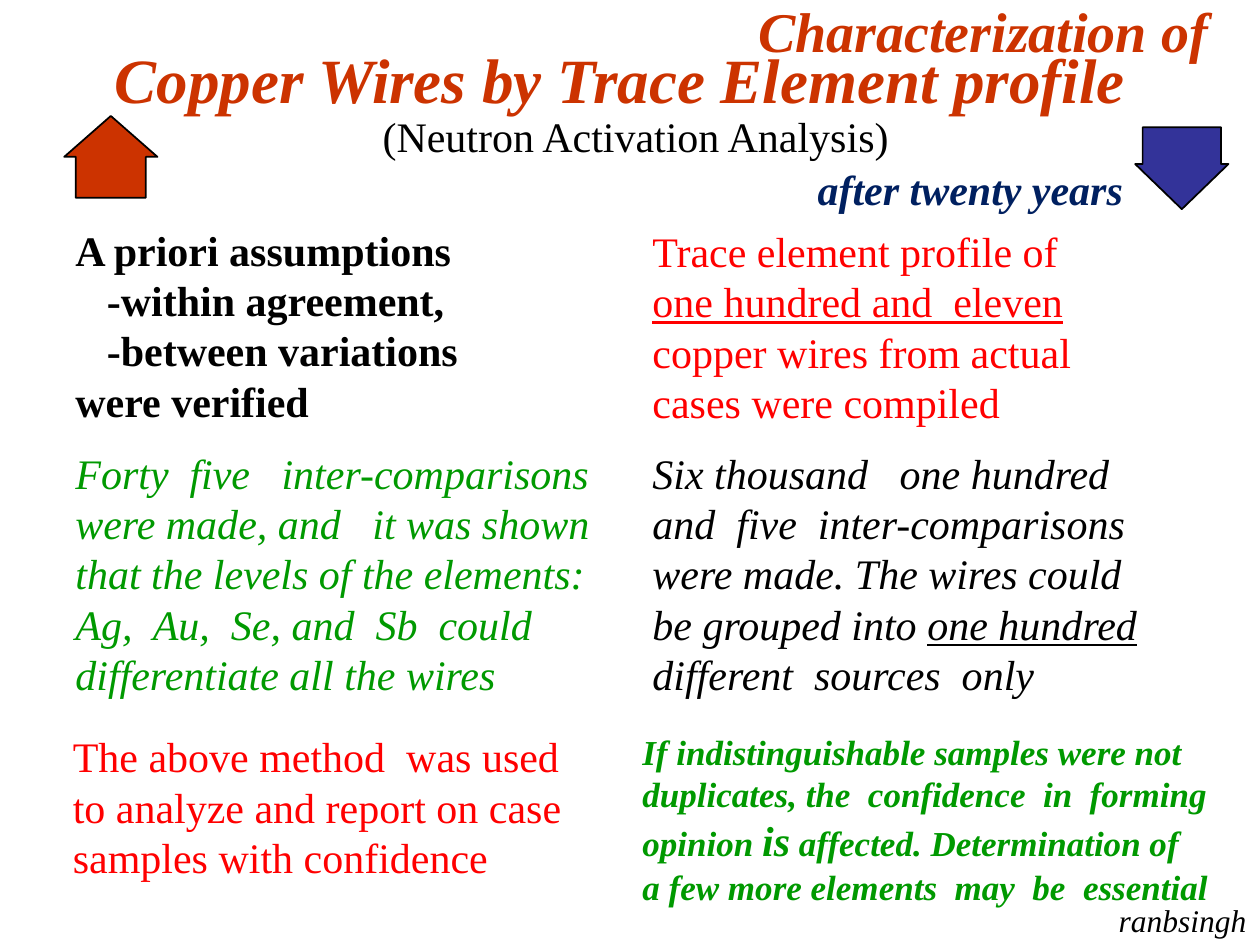
from pptx import Presentation
from pptx.dml.color import RGBColor
from pptx.enum import shapes, text
from pptx.util import Inches, Pt

FONT = "Times New Roman"
BLACK, RED, GREEN = "000000", "FF0000", "009900"
RUST, NAVY, INDIGO = "CC3300", "002060", "333399"
LEFT, RIGHT = 0.5, 5.08  # column edges


def rgb(value):
    return RGBColor.from_string(value)


def add_text(slide, box, lines, color, size=24, bold=False, italic=False,
             align=text.PP_ALIGN.LEFT, anchor=text.MSO_ANCHOR.TOP, wrap=False):
    """Add a text box; a line is a string or a list of (text, size, underline)."""
    tf = slide.shapes.add_textbox(*map(Inches, box)).text_frame
    tf.word_wrap = wrap
    tf.vertical_anchor = anchor
    for i, line in enumerate(lines):
        p = tf.paragraphs[0] if i == 0 else tf.add_paragraph()
        p.alignment = align
        if isinstance(line, str):
            line = [(line, size, False)]
        for words, run_size, underline in line:
            r = p.add_run()
            r.text = words
            r.font.size = Pt(run_size)
            if underline:
                r.font.underline = True
        p.font.name = FONT
        p.font.size = Pt(size)
        p.font.bold = bold
        p.font.italic = italic
        p.font.color.rgb = rgb(color)
        for r in p.runs:
            r.font.name = FONT
            r.font.bold = bold
            r.font.italic = italic
            r.font.color.rgb = rgb(color)
    return tf


def indent(paragraphs, inches):
    for p in paragraphs:
        pPr = p._p.get_or_add_pPr()
        pPr.set("marL", str(Inches(inches)))
        pPr.set("indent", "0")


def add_arrow(slide, kind, left, top, fill, adjustments):
    sp = slide.shapes.add_shape(kind, Inches(left), Inches(top),
                                Inches(0.74), Inches(0.65))
    sp.shadow.inherit = False
    sp.fill.solid()
    sp.fill.fore_color.rgb = rgb(fill)
    sp.line.color.rgb = rgb(BLACK)
    sp.line.width = Pt(1)
    for i, value in enumerate(adjustments):
        sp.adjustments[i] = value


def add_heading(slide):
    center = text.PP_ALIGN.CENTER
    add_text(slide, (0.25, 0.33, 9.5, 0.5),
             [[("Copper Wires by Trace Element profile", 36, False),
               (" ", 44, False)]],
             RUST, 36, True, True, center, text.MSO_ANCHOR.MIDDLE, True)
    add_text(slide, (5.9, -0.08, 3.92, 0.64), ["Characterization of "],
             RUST, 32, True, True, center)
    add_text(slide, (2.92, 0.83, 4.25, 0.5), ["(Neutron Activation Analysis)"],
             BLACK, align=center)
    add_text(slide, (6.39, 1.25, 2.65, 0.51), ["after twenty years"],
             NAVY, bold=True, italic=True)


def add_left_column(slide):
    tf = add_text(slide, (LEFT, 1.73, 4, 1.7),
                  ["A priori assumptions", "-within agreement,",
                   "-between variations", "were verified"],
                  BLACK, bold=True, wrap=True)
    indent(tf.paragraphs[1:3], 0.25)
    add_text(slide, (LEFT, 3.5, 4.29, 2.1),
             ["Forty  five   inter-comparisons",
              "were made, and   it was shown",
              "that the levels of the elements:",
              "Ag,  Au,  Se, and  Sb  could",
              "differentiate all the wires"], GREEN, italic=True)
    add_text(slide, (0.48, 5.75, 4.16, 1.3),
             ["The above method  was used",
              "to analyze and report on case",
              "samples with confidence"], RED)


def add_right_column(slide):
    add_text(slide, (RIGHT, 1.74, 3.75, 1.7),
             ["Trace element profile of",
              [("one hundred and  eleven", 24, True)],
              "copper wires from actual cases were compiled"],
             RED, wrap=True)
    add_text(slide, (RIGHT, 3.5, 4.07, 2.5),
             ["Six thousand   one hundred",
              "and  five  inter-comparisons",
              "were made. The wires could",
              [("be grouped into ", 24, False), ("one hundred", 24, True)],
              "different  sources  only"],
             BLACK, italic=True, wrap=True)
    add_text(slide, (5, 5.75, 4.74, 1.5),
             ["If indistinguishable samples were not",
              "duplicates, the  confidence  in  forming",
              [("opinion ", 20, False), ("is", 24, False),
               (" affected. Determination of", 20, False)],
              "a few more elements  may  be  essential"],
             GREEN, 20, True, True)


def main():
    prs = Presentation()
    prs.slide_width, prs.slide_height = Inches(10), Inches(7.5)
    slide = prs.slides.add_slide(prs.slide_layouts[6])

    # Heading and the arrows beside it
    add_heading(slide)
    add_arrow(slide, shapes.MSO_SHAPE.UP_ARROW, 0.51, 0.92, RUST, (0.75, 0.5))
    add_arrow(slide, shapes.MSO_SHAPE.DOWN_ARROW, 9.01, 1.01, INDIGO,
              (0.84, 0.55))

    # Earlier findings and those twenty years on
    add_left_column(slide)
    add_right_column(slide)

    # Author
    add_text(slide, (8.78, 7.1, 1.22, 0.4), ["ranbsingh"], BLACK, 18,
             italic=True, wrap=True)

    prs.save("out.pptx")


if __name__ == "__main__":
    main()
